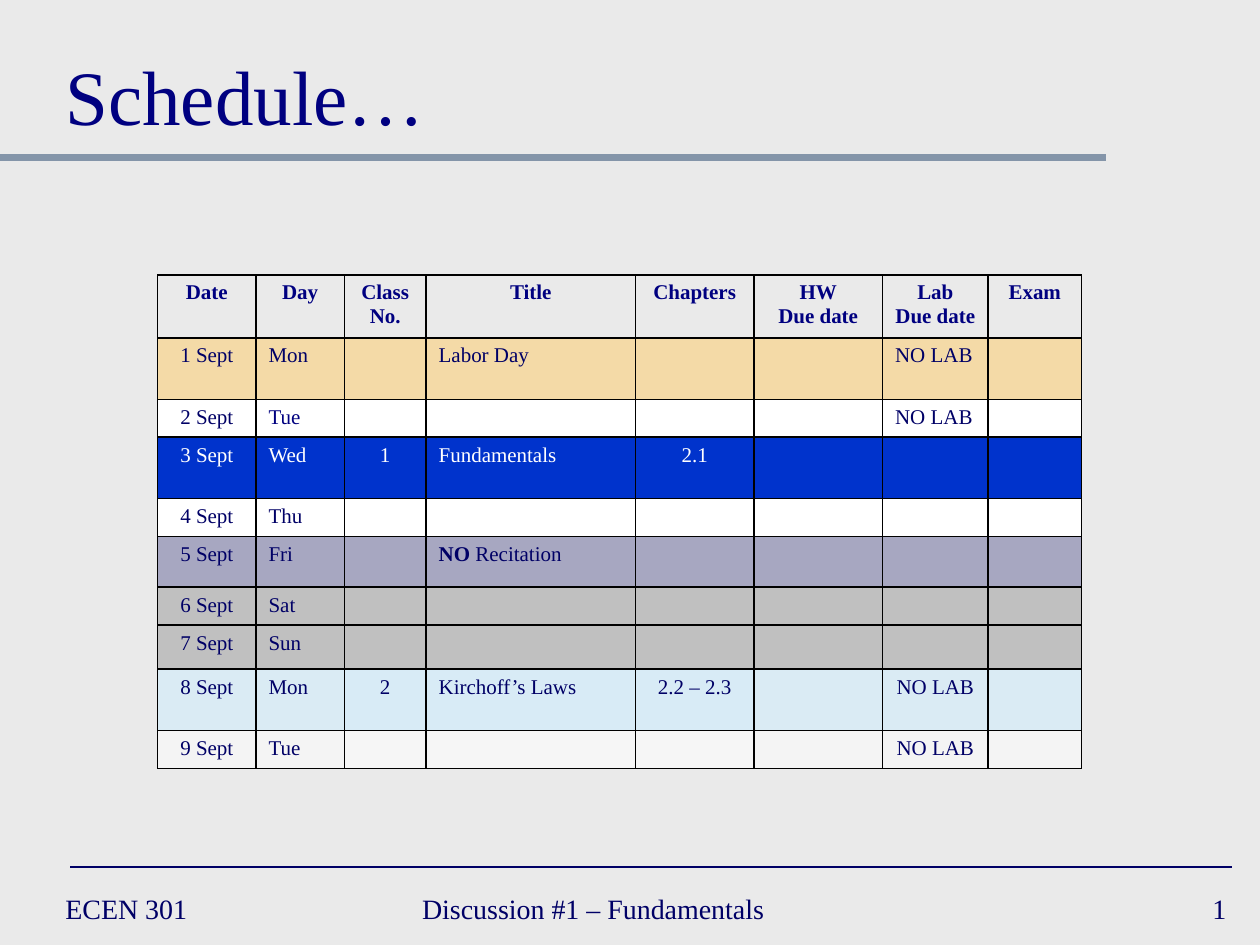
from lxml.etree import SubElement
from pptx import Presentation
from pptx.dml.color import RGBColor
from pptx.enum.shapes import MSO_CONNECTOR
from pptx.enum.text import MSO_ANCHOR, PP_ALIGN
from pptx.oxml.ns import qn
from pptx.util import Cm, Pt

FONT = "Times New Roman"
COLORS = {
    "background": "EAEAEA", "title": "000080", "body": "000066",
    "rule": "8495A9", "border": "000000", "white": "FFFFFF",
    "holiday": "FFCC66", "today": "0033CC", "recitation": "666699",
    "weekend": "C0C0C0", "lecture": "CCECFF",
}
LEFT, CENTER, RIGHT = PP_ALIGN.LEFT, PP_ALIGN.CENTER, PP_ALIGN.RIGHT

HEADINGS = ["Date", "Day", "Class\nNo.", "Title", "Chapters",
            "HW\nDue date", "Lab\nDue date", "Exam"]
COLUMN_WIDTHS = [1.98, 1.78, 1.65, 4.22, 2.39, 2.59, 2.13, 1.88]
HEADING_HEIGHT = 1.24
DAY, TITLE, LAB = 1, 3, 6
CLASS_COLUMNS = range(2, 5)

# height, fill, opacity, opacity of the class columns, {column: text}
DAYS = [
    (1.24, "holiday", 50, 50, {0: "1 Sept", 1: "Mon", 3: "Labor Day", 6: "NO LAB"}),
    (0.76, "white", 100, 100, {0: "2 Sept", 1: "Tue", 6: "NO LAB"}),
    (1.24, "today", 100, 100, {0: "3 Sept", 1: "Wed", 2: "1", 3: "Fundamentals", 4: "2.1"}),
    (0.76, "white", 100, 100, {0: "4 Sept", 1: "Thu"}),
    (1.02, "recitation", 50, 50, {0: "5 Sept", 1: "Fri", 3: "NO Recitation"}),
    (0.76, "weekend", 100, 100, {0: "6 Sept", 1: "Sat"}),
    (0.89, "weekend", 100, 100, {0: "7 Sept", 1: "Sun"}),
    (1.24, "lecture", 50, 60,
     {0: "8 Sept", 1: "Mon", 2: "2", 3: "Kirchoff’s Laws", 4: "2.2 – 2.3", 6: "NO LAB"}),
    (0.76, "white", 50, 60, {0: "9 Sept", 1: "Tue", 6: "NO LAB"}),
]
LEFT_LAB_ROWS = (1, 2)
BOLD_LEADS = {"NO Recitation": "NO"}


def rgb(name):
    return RGBColor.from_string(COLORS[name])


def write_text(frame, text, size=12, color="body", bold=False, align=LEFT, bold_lead=""):
    """Write one paragraph per line; bold_lead is the bold start of the text."""
    for number, line in enumerate(text.split("\n")):
        paragraph = frame.add_paragraph() if number else frame.paragraphs[0]
        paragraph.alignment = align
        if not line:
            paragraph._p.get_or_add_endParaRPr().set("sz", str(size * 100))
        for part, is_bold in ((bold_lead, True), (line[len(bold_lead):], bold)):
            if part:
                run = paragraph.add_run()
                run.text = part
                run.font.name, run.font.size = FONT, Pt(size)
                run.font.bold = is_bold
                run.font.color.rgb = rgb(color)


def add_label(slide, text, left, top, width, height, anchor=MSO_ANCHOR.MIDDLE, **text_format):
    label = slide.shapes.add_textbox(Cm(left), Cm(top), Cm(width), Cm(height))
    label.text_frame.word_wrap = True
    label.text_frame.vertical_anchor = anchor
    write_text(label.text_frame, text, **text_format)


def add_rule(slide, left, top, width, color, weight):
    rule = slide.shapes.add_connector(
        MSO_CONNECTOR.STRAIGHT, Cm(left), Cm(top), Cm(left + width), Cm(top))
    rule.line.color.rgb = rgb(color)
    rule.line.width = Pt(weight)
    SubElement(rule._element.spPr, qn("a:effectLst"))


def add_heading(slide, left, top, width, height):
    add_rule(slide, 0, top + height + 0.2, 22.3, "rule", 4)
    add_label(slide, "Schedule…", left, top, width, height,
              anchor=MSO_ANCHOR.BOTTOM, size=44, color="title")


def add_footer(slide, left, top, width, height):
    add_rule(slide, left + 0.35, top - 0.3, 23.42, "body", 1)
    number_width = 5.28
    for text, offset, label_width, align in (
            ("ECEN 301", 0, 5.51, LEFT),
            ("Discussion #1 – Fundamentals", 7.19, 9.73, LEFT),
            ("1", width - number_width, number_width, RIGHT)):
        add_label(slide, text, left + offset, top, label_width, height, size=16, align=align)


def add_borders(cell):
    properties = cell._tc.get_or_add_tcPr()
    for side in ("lnL", "lnR", "lnT", "lnB"):
        border = SubElement(properties, qn(f"a:{side}"), w=str(Pt(1)))
        fill = SubElement(border, qn("a:solidFill"))
        SubElement(fill, qn("a:srgbClr"), val=COLORS["border"])


def fill_cell(cell, color, opacity):
    cell.fill.solid()
    cell.fill.fore_color.rgb = rgb(color)
    if opacity < 100:
        tint = cell._tc.tcPr.find(f"{qn('a:solidFill')}/{qn('a:srgbClr')}")
        SubElement(tint, qn("a:alpha"), val=str(opacity * 1000))


def day_alignment(row, column):
    left_lab = column == LAB and row in LEFT_LAB_ROWS
    return LEFT if column in (DAY, TITLE) or left_lab else CENTER


def add_schedule(slide, left, top):
    heights = [HEADING_HEIGHT] + [day[0] for day in DAYS]
    table = slide.shapes.add_table(
        len(heights), len(HEADINGS), Cm(left), Cm(top),
        Cm(sum(COLUMN_WIDTHS)), Cm(sum(heights))).table
    table.first_row = table.horz_banding = False
    for column, width in zip(table.columns, COLUMN_WIDTHS):
        column.width = Cm(width)
    for row, height in zip(table.rows, heights):
        row.height = Cm(height)
    for cell in table.iter_cells():
        add_borders(cell)

    for column, heading in enumerate(HEADINGS):
        cell = table.cell(0, column)
        cell.fill.background()
        write_text(cell.text_frame, heading, color="title", bold=True, align=CENTER)
    for row, (_, fill, opacity, class_opacity, entries) in enumerate(DAYS, 1):
        for column in range(len(HEADINGS)):
            cell = table.cell(row, column)
            fill_cell(cell, fill, class_opacity if column in CLASS_COLUMNS else opacity)
            text = entries.get(column, "")
            color = "white" if fill == "today" else "title" if (row, column) == (2, DAY) else "body"
            write_text(cell.text_frame, text, color=color,
                       align=day_alignment(row, column), bold_lead=BOLD_LEADS.get(text, ""))


def main():
    presentation = Presentation()
    presentation.slide_width, presentation.slide_height = Cm(25.4), Cm(19.05)
    slide = presentation.slides.add_slide(presentation.slide_layouts[6])
    slide.background.fill.solid()
    slide.background.fill.fore_color.rgb = rgb("background")
    add_footer(slide, 1.07, 17.78, 23.9, 1.07)
    add_schedule(slide, 3.18, 5.54)
    add_heading(slide, 1.07, 0.43, 23.5, 2.54)
    presentation.save("out.pptx")


if __name__ == "__main__":
    main()
